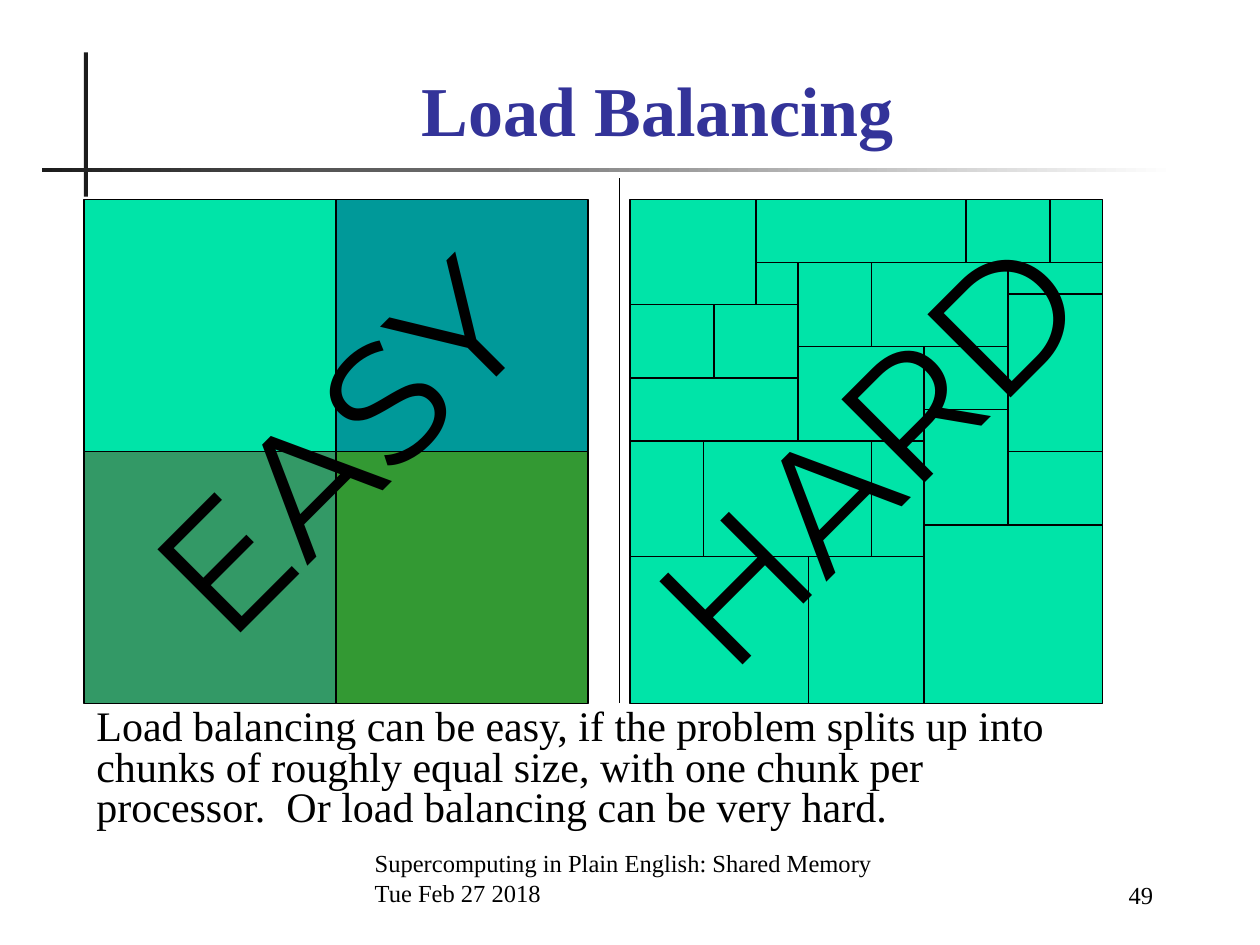
from dataclasses import dataclass

from lxml import etree
from pptx import Presentation
from pptx.dml.color import RGBColor
from pptx.enum.shapes import MSO_CONNECTOR, MSO_SHAPE
from pptx.enum.text import MSO_ANCHOR, PP_ALIGN
from pptx.oxml.ns import qn
from pptx.util import Pt

RECTANGLE = MSO_SHAPE.RECTANGLE
STRAIGHT = MSO_CONNECTOR.STRAIGHT
TOP, BOTTOM = MSO_ANCHOR.TOP, MSO_ANCHOR.BOTTOM
LEFT, CENTER, RIGHT = PP_ALIGN.LEFT, PP_ALIGN.CENTER, PP_ALIGN.RIGHT

EMU_PER_PX = 9525
UNIT = 8


@dataclass(frozen=True)
class Theme:
    ink: str = "000000"
    title: str = "333399"
    rule: str = "1C1C1C"
    paper: str = "FFFFFF"
    mint: str = "00E4A8"
    teal: str = "009999"
    sea: str = "339966"
    leaf: str = "339933"
    serif: str = "Times New Roman"
    display: str = "Montserrat"
    footer_size: int = 14
    body_size: int = 24
    title_size: int = 40
    word_size: int = 96
    outline: float = 0.75


THEME = Theme()

QUARTERS = [THEME.mint, THEME.teal, THEME.sea, THEME.leaf]

HARD_TILES = [
    (0, 0, 12, 10), (12, 0, 20, 6), (32, 0, 8, 6), (40, 0, 5, 6),
    (12, 6, 4, 4), (16, 6, 7, 8), (23, 6, 13, 8), (36, 6, 9, 3),
    (0, 10, 8, 7), (8, 10, 8, 7), (36, 9, 9, 15), (16, 14, 12, 9),
    (28, 14, 8, 6), (0, 17, 16, 6), (28, 20, 8, 11), (36, 24, 9, 7),
    (0, 23, 7, 11), (7, 23, 16, 11), (23, 23, 5, 11), (28, 31, 17, 17),
    (0, 34, 17, 14), (17, 34, 11, 14),
]


def px(*lengths):
    return [length * EMU_PER_PX for length in lengths]


def rgb(color):
    return RGBColor.from_string(color)


class SlideBuilder:
    def __init__(self, page, theme):
        self.page = page
        self.theme = theme

    def bar(self, frame, color, fade_to=None):
        shape = self.page.shapes.add_shape(RECTANGLE, *px(*frame))
        shape.shadow.inherit = False
        shape.line.fill.background()
        if fade_to:
            shape.fill.gradient()
            shape.fill.gradient_angle = 0
            for stop, stop_color in zip(shape.fill.gradient_stops, (color, fade_to)):
                stop.color.rgb = rgb(stop_color)
        else:
            shape.fill.solid()
            shape.fill.fore_color.rgb = rgb(color)
        return shape

    def tile(self, frame, color):
        shape = self.bar(frame, color)
        shape.line.color.rgb = rgb(self.theme.ink)
        shape.line.width = Pt(self.theme.outline)

    def line(self, start, end):
        connector = self.page.shapes.add_connector(STRAIGHT, *px(*start, *end))
        connector.line.color.rgb = rgb(self.theme.ink)
        connector.line.width = Pt(self.theme.outline)
        etree.SubElement(connector._element.spPr, qn("a:effectLst"))

    def text(self, frame, words, size, font=None, color=None, bold=False,
             align=LEFT, anchor=TOP, spacing=None, rotation=0):
        box = self.page.shapes.add_textbox(*px(*frame))
        box.rotation = rotation
        text_frame = box.text_frame
        text_frame.word_wrap = True
        text_frame.vertical_anchor = anchor
        text_frame.text = words
        for paragraph in text_frame.paragraphs:
            paragraph.alignment = align
            paragraph.line_spacing = spacing
            for span in paragraph.runs:
                span.font.name = font or self.theme.serif
                span.font.size = Pt(size)
                span.font.bold = bold
                span.font.color.rgb = rgb(color or self.theme.ink)

    def diagonal_word(self, frame, word):
        self.text(frame, word, self.theme.word_size, font=self.theme.display,
                  align=CENTER, rotation=315)


def main():
    deck = Presentation()
    deck.slide_width, deck.slide_height = px(960, 720)
    page = deck.slides.add_slide(deck.slide_layouts[6])
    slide = SlideBuilder(page, THEME)

    slide.bar((64, 40, 3, 110), THEME.rule)
    slide.bar((32, 128, 864, 3), THEME.rule, fade_to=THEME.paper)
    slide.text((276, 648, 420, 48),
               "Supercomputing in Plain English: Shared Memory\nTue Feb 27 2018",
               THEME.footer_size, anchor=BOTTOM)
    slide.text((752, 650, 136, 48), "49", THEME.footer_size,
               align=RIGHT, anchor=BOTTOM)
    slide.text((80, 48, 842, 71), "Load Balancing", THEME.title_size,
               color=THEME.title, bold=True, align=CENTER, anchor=BOTTOM)

    side = 192
    for index, color in enumerate(QUARTERS):
        row, column = divmod(index, 2)
        slide.tile((64 + column * side, 152 + row * side, side, side), color)

    slide.line((472, 136), (472, 536))

    for column, row, width, height in HARD_TILES:
        slide.tile((480 + column * UNIT, 152 + row * UNIT,
                    width * UNIT, height * UNIT), THEME.mint)

    slide.text((64, 536, 784, 102),
               "Load balancing can be easy, if the problem splits up into chunks "
               "of roughly equal size, with one chunk per processor.  Or load "
               "balancing can be very hard.",
               THEME.body_size, spacing=0.8)
    slide.diagonal_word((48, 256, 416, 163), "EASY")
    slide.diagonal_word((446, 260, 426, 163), "HARD")

    deck.save("out.pptx")


if __name__ == "__main__":
    main()
